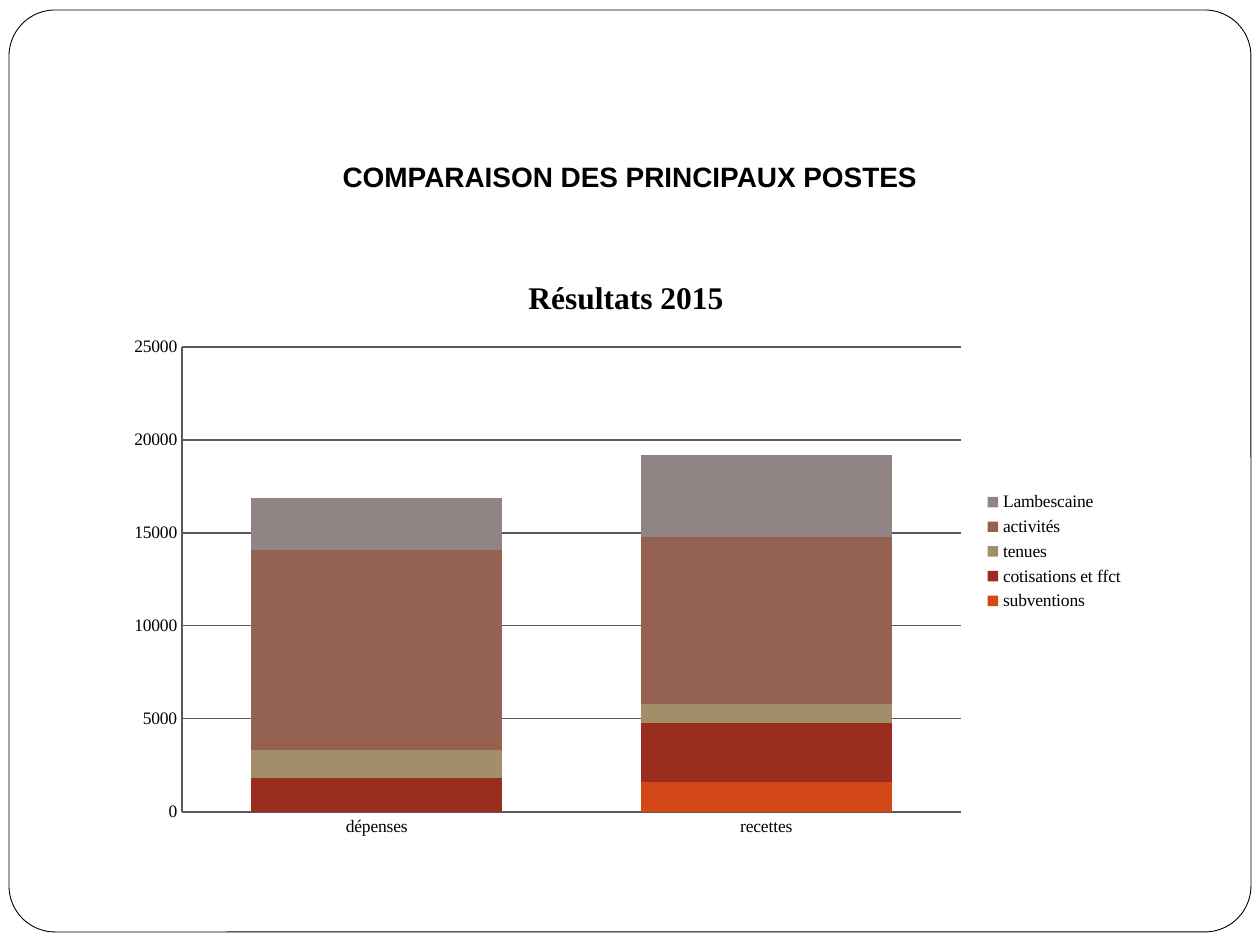
from lxml.etree import SubElement
from pptx import Presentation
from pptx.chart.data import CategoryChartData
from pptx.dml.color import RGBColor
from pptx.enum.chart import XL_CHART_TYPE, XL_LEGEND_POSITION, XL_TICK_MARK
from pptx.enum.shapes import MSO_SHAPE
from pptx.enum.text import MSO_ANCHOR, MSO_AUTO_SIZE, PP_ALIGN
from pptx.oxml.ns import qn
from pptx.util import Pt

EMU_PER_PX = 914400 / 126
COLORS = {"paper": "FFFFFF", "ink": "000000", "grid": "595959"}
CATEGORIES = ["dépenses", "recettes"]
# name, colour, values
SERIES = [
    ("subventions", "D34817", (None, 1600)),
    ("cotisations et ffct", "9B2D1F", (1800, 3200)),
    ("tenues", "A28E6A", (1500, 1000)),
    ("activités", "956251", (10800, 9000)),
    ("Lambescaine", "918485", (2800, 4400)),
]


def px(n):
    return round(n * EMU_PER_PX)


def rgb(value):
    return RGBColor.from_string(COLORS.get(value, value))


class SlideBuilder:
    title_font = "Arial"
    chart_font = "Times New Roman"

    def __init__(self, prs):
        self.s = prs.slides.add_slide(prs.slide_layouts[5])

    def style(self, font, name, size, bold=False):
        font.name, font.size, font.bold = name, Pt(size), bold
        font.color.rgb = rgb("ink")

    def frame(self, *box):
        sp = self.s.shapes.add_shape(MSO_SHAPE.ROUNDED_RECTANGLE, *map(px, box))
        sp.adjustments[0] = 0.05
        sp.shadow.inherit = False
        sp.fill.solid()
        sp.fill.fore_color.rgb = rgb("paper")
        sp.line.color.rgb = rgb("ink")
        sp.line.width = Pt(0.5)

    def title(self, text, *box):
        sp = self.s.shapes.title
        sp.left, sp.top, sp.width, sp.height = map(px, box)
        tf = sp.text_frame
        tf.text = text
        tf.word_wrap = True
        tf.auto_size = MSO_AUTO_SIZE.SHAPE_TO_FIT_TEXT
        tf.vertical_anchor = MSO_ANCHOR.MIDDLE
        p = tf.paragraphs[0]
        p.alignment = PP_ALIGN.CENTER
        self.style(p.runs[0].font, self.title_font, 16, bold=True)
        # The placeholder comes first in the tree: bring it to the front
        self.s.shapes._spTree.append(sp._element)

    def stacked_chart(self, title, box, plot_box):
        data = CategoryChartData()
        data.categories = CATEGORIES
        for name, _, values in SERIES:
            data.add_series(name, values)
        chart = self.s.shapes.add_chart(
            XL_CHART_TYPE.COLUMN_STACKED, *map(px, box), data).chart
        self.style(chart.font, self.chart_font, 10)

        # Title and legend
        chart.has_title = True
        tf = chart.chart_title.text_frame
        tf.text = title
        self.style(tf.paragraphs[0].runs[0].font, self.chart_font, 18, bold=True)
        chart.has_legend = True
        chart.legend.position = XL_LEGEND_POSITION.RIGHT
        chart.legend.include_in_layout = False

        # Columns
        plot = chart.plots[0]
        plot.gap_width, plot.overlap, plot.vary_by_categories = 55, 100, False
        for series, (_, color, _) in zip(plot.series, SERIES):
            series.format.fill.solid()
            series.format.fill.fore_color.rgb = rgb(color)

        # Axes
        axis = chart.value_axis
        axis.minimum_scale, axis.maximum_scale, axis.major_unit = 0, 25000, 5000
        axis.has_major_gridlines = True
        lines = [axis.major_gridlines.format.line]
        for ax in (axis, chart.category_axis):
            ax.major_tick_mark = XL_TICK_MARK.NONE
            lines.append(ax.format.line)
        for line in lines:
            line.color.rgb = rgb("grid")
            line.width = Pt(0.75)
        self.place_plot(chart, box, plot_box)

    def place_plot(self, chart, box, plot_box):
        left, top, width, height = box
        x, y, w, h = plot_box
        area = chart._chartSpace.chart.plotArea
        for old in area.findall(qn("c:layout")):
            area.remove(old)
        layout = SubElement(area, qn("c:layout"))
        area.insert(0, layout)
        manual = SubElement(layout, qn("c:manualLayout"))
        for tag, val in (
            ("layoutTarget", "inner"), ("xMode", "edge"), ("yMode", "edge"),
            ("x", (x - left) / width), ("y", (y - top) / height),
            ("w", w / width), ("h", h / height),
        ):
            SubElement(manual, qn(f"c:{tag}")).set("val", str(val))


def main():
    prs = Presentation()
    prs.slide_width, prs.slide_height = px(1260), px(945)
    slide = SlideBuilder(prs)
    slide.frame(9, 10, 1242, 922)
    slide.stacked_chart("Résultats 2015", (115, 254, 1022, 595), (182, 347, 779, 465))
    slide.title("COMPARAISON DES PRINCIPAUX POSTES", 0, 153, 1260, 47)
    prs.save("out.pptx")


if __name__ == "__main__":
    main()
